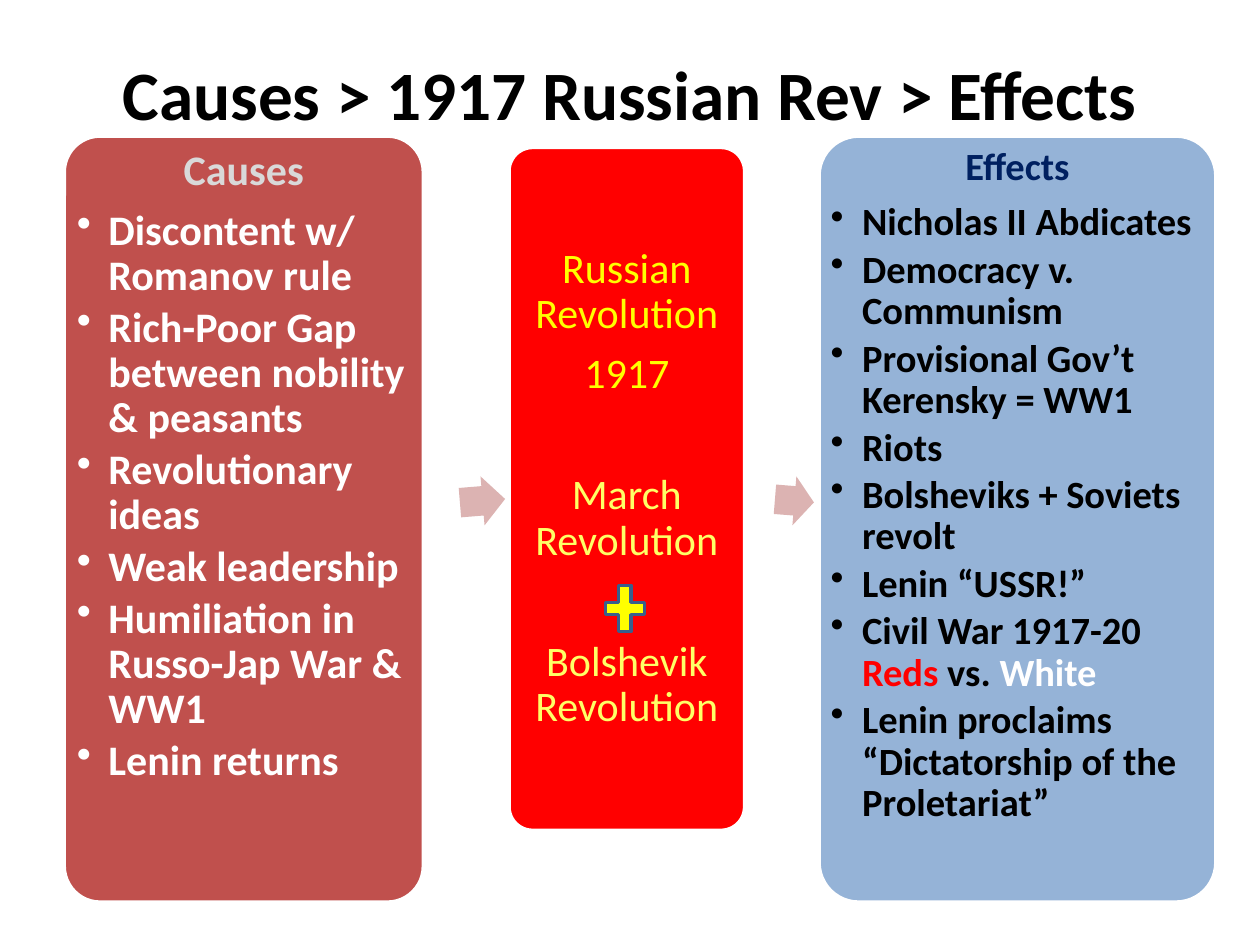
from dataclasses import dataclass

from lxml.etree import SubElement
from pptx import Presentation
from pptx.dml.color import RGBColor
from pptx.enum.shapes import MSO_SHAPE
from pptx.enum.text import MSO_ANCHOR, PP_ALIGN
from pptx.oxml.ns import qn
from pptx.util import Inches, Pt


@dataclass(frozen=True)
class Theme:
    font: str = "Calibri"
    title_size: float = 39.6
    text_size: float = 24
    effects_size: float = 22
    black: str = "000000"
    white: str = "FFFFFF"
    brick: str = "C0504D"
    pale_brick: str = "DCB3B2"
    red: str = "FF0000"
    yellow: str = "FFFF00"
    light_yellow: str = "FFFF66"
    sky: str = "95B3D7"
    navy: str = "002060"
    grey: str = "D9D9D9"
    plus_edge: str = "3A5F8C"


THEME = Theme()
LINE_SPACING = 0.9
CORNER = 0.1

# Content
TITLE = "Causes > 1917 Russian Rev > Effects"
CAUSES = [
    "Discontent w/ Romanov rule",
    "Rich-Poor Gap between nobility & peasants",
    "Revolutionary ideas",
    "Weak leadership",
    "Humiliation in Russo-Jap War & WW1",
    "Lenin returns",
]
# Text, colour, whether a line-high gap comes first
REVOLUTIONS = [
    ("Russian Revolution", THEME.yellow, False),
    ("1917", THEME.yellow, False),
    ("March Revolution", THEME.light_yellow, True),
    ("Bolshevik Revolution", THEME.light_yellow, True),
]
# A list item holds (text, colour) runs
EFFECTS = [
    "Nicholas II Abdicates",
    "Democracy v. Communism",
    "Provisional Gov’t Kerensky = WW1",
    "Riots",
    "Bolsheviks + Soviets revolt",
    "Lenin “USSR!”",
    [("Civil War 1917-20 ", THEME.black), ("Reds ", THEME.red),
     ("vs. ", THEME.black), ("White", THEME.white)],
    "Lenin proclaims “Dictatorship of the Proletariat”",
]

# Left, top, width, height in inches
TITLE_BOX = (0.5, 0.3, 9, 0.87)
CAUSES_BOX = (0.51, 1.08, 2.85, 6.08)
REVOLUTION_BOX = (4.04, 1.17, 1.87, 5.42)
EFFECTS_BOX = (6.5, 1.08, 3.15, 6.08)
PLUS_BOX = (4.75, 4.58, 0.42, 0.5)
ARROWS = [((3.65, 3.78, 0.36, 0.39), 355.3), ((6.15, 3.78, 0.31, 0.39), 4.6)]


def rgb(colour):
    return RGBColor.from_string(colour)


def add_figure(slide, preset, box, fill, edge=None):
    figure = slide.shapes.add_shape(preset, *map(Inches, box))
    figure.shadow.inherit = False
    figure.fill.solid()
    figure.fill.fore_color.rgb = rgb(fill)
    if edge:
        figure.line.color.rgb = rgb(edge)
        figure.line.width = Pt(2)
    else:
        figure.line.fill.background()
    return figure


def add_panel(slide, box, fill, anchor, inset=0.1):
    panel = add_figure(slide, MSO_SHAPE.ROUNDED_RECTANGLE, box, fill, THEME.white)
    panel.adjustments[0] = CORNER
    frame = panel.text_frame
    frame.word_wrap = True
    frame.vertical_anchor = anchor
    # The rounded corners already push the text in by 0.29 of their radius
    margin = Inches(max(0, inset - 0.29 * CORNER * box[2]))
    frame.margin_left = frame.margin_right = margin
    frame.margin_top = frame.margin_bottom = margin
    return frame


def write(paragraph, content, size, colour, bold=True, align=PP_ALIGN.CENTER):
    paragraph.alignment = align
    font = paragraph.font
    font.name, font.size, font.bold = THEME.font, Pt(size), bold
    runs = [(content, colour)] if isinstance(content, str) else content
    for text, run_colour in runs:
        run = paragraph.add_run()
        run.text = text
        run.font.color.rgb = rgb(run_colour)


def space(paragraph, size, after):
    paragraph.line_spacing = LINE_SPACING
    paragraph.space_after = Pt(round(size * after, 1))


def add_bullet(paragraph):
    properties = paragraph._p.get_or_add_pPr()
    properties.set("marL", str(Inches(0.25)))
    properties.set("indent", str(-Inches(0.25)))
    bullet = SubElement(properties, qn("a:buChar"))
    bullet.set("char", "•")
    # Bullet settings come before the default run properties
    properties.find(qn("a:defRPr")).addprevious(bullet)


def fill_list(frame, heading, heading_colour, items, colour, size):
    first = frame.paragraphs[0]
    write(first, heading, size, heading_colour)
    space(first, size, 0.35)
    for item in items:
        paragraph = frame.add_paragraph()
        paragraph.level = 1
        write(paragraph, item, size, colour, align=PP_ALIGN.LEFT)
        space(paragraph, size, 0.15)
        add_bullet(paragraph)


def main():
    deck = Presentation()
    deck.slide_width, deck.slide_height = Inches(10), Inches(7.5)
    slide = deck.slides.add_slide(deck.slide_layouts[6])

    # Title
    title = slide.shapes.add_textbox(*map(Inches, TITLE_BOX)).text_frame
    title.word_wrap = True
    title.vertical_anchor = MSO_ANCHOR.MIDDLE
    write(title.paragraphs[0], TITLE, THEME.title_size, THEME.black)

    # Causes
    causes = add_panel(slide, CAUSES_BOX, THEME.brick, MSO_ANCHOR.TOP)
    fill_list(causes, "Causes", THEME.grey, CAUSES, THEME.white, THEME.text_size)

    # Revolutions
    revolution = add_panel(slide, REVOLUTION_BOX, THEME.red, MSO_ANCHOR.MIDDLE)
    for index, (text, colour, gap) in enumerate(REVOLUTIONS):
        paragraph = revolution.add_paragraph() if index else revolution.paragraphs[0]
        write(paragraph, text, THEME.text_size, colour, bold=False)
        space(paragraph, THEME.text_size, 0.35)
        if gap:
            paragraph.space_before = Pt(34.8)

    # Effects
    effects = add_panel(slide, EFFECTS_BOX, THEME.sky, MSO_ANCHOR.TOP, inset=0.09)
    fill_list(effects, "Effects", THEME.navy, EFFECTS, THEME.black, THEME.effects_size)

    # Arrows between the panels
    for box, rotation in ARROWS:
        arrow = add_figure(slide, MSO_SHAPE.RIGHT_ARROW, box, THEME.pale_brick)
        arrow.adjustments[0] = 0.6
        arrow.rotation = rotation

    # Plus between the two revolutions
    add_figure(slide, MSO_SHAPE.MATH_PLUS, PLUS_BOX, THEME.yellow, THEME.plus_edge)

    deck.save("out.pptx")


if __name__ == "__main__":
    main()
